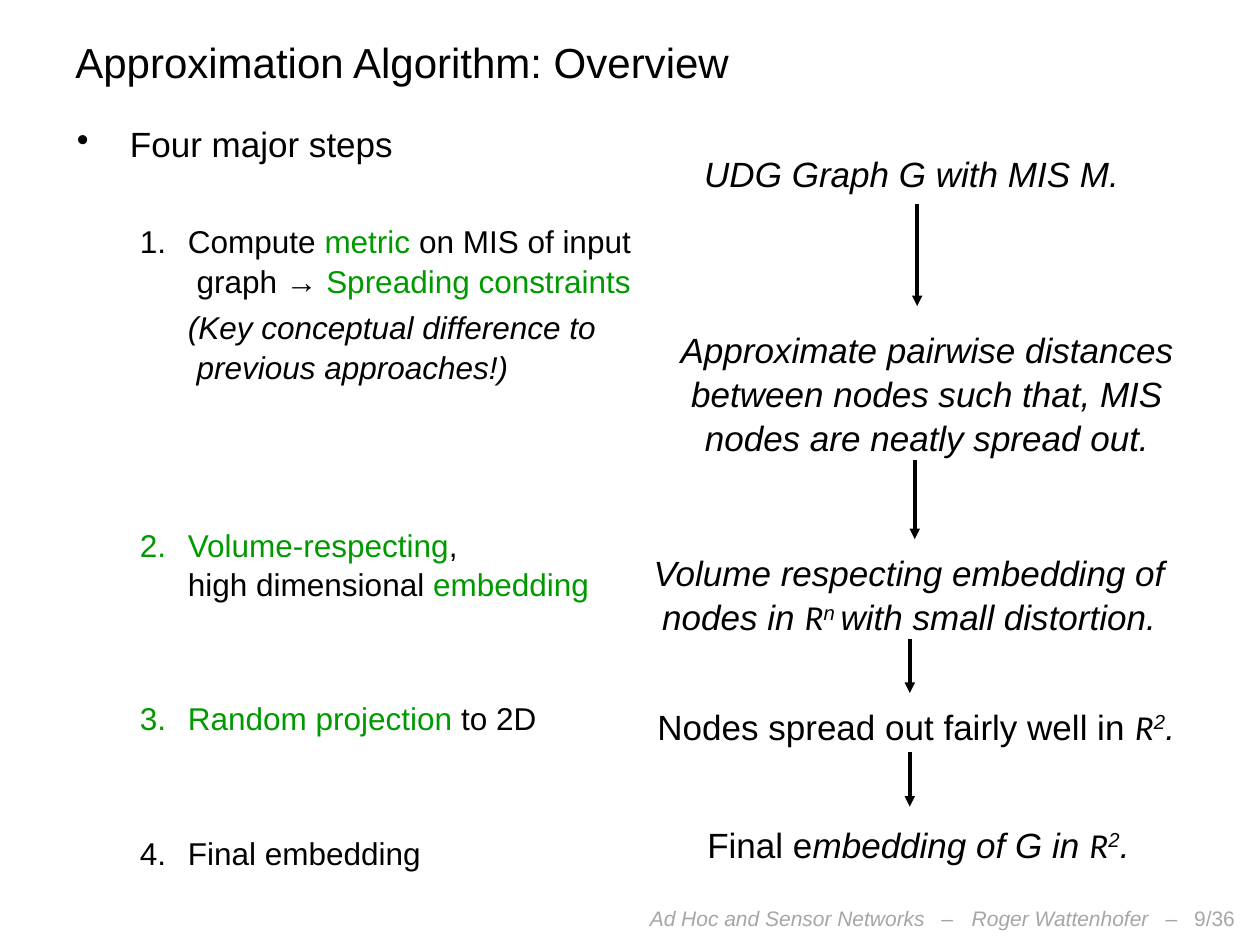
import pptx
import pptx.dml.color
import pptx.enum.shapes
import pptx.enum.text
import pptx.oxml.ns
import pptx.util
from lxml import etree

Cm, Pt = pptx.util.Cm, pptx.util.Pt
qn = pptx.oxml.ns.qn
ALIGN = pptx.enum.text.PP_ALIGN
BLACK, GREEN, GRAY = "000000", "009900", "A6A6A6"


def add_box(x, y, w, h):
    tf = s.shapes.add_textbox(Cm(x), Cm(y), Cm(w), Cm(h)).text_frame
    tf.word_wrap = True
    return tf


def add_run(p, text, size, color=BLACK, italic=False, font="Arial", raised=False):
    for i, line in enumerate(text.split("\n")):
        if i:
            p.add_line_break()
        if not line:
            continue
        r = p.add_run()
        r.text = line
        r.font.size = Pt(size)
        r.font.name = font
        r.font.italic = italic
        r.font.color.rgb = pptx.dml.color.RGBColor.from_string(color)
        if raised:
            r.font._element.set("baseline", "30000")


prs = pptx.Presentation()
prs.slide_width, prs.slide_height = Cm(25.4), Cm(19.05)
s = prs.slides.add_slide(prs.slide_layouts[6])

# Footer and page number
p = add_box(12.85, 18.14, 11.43, 0.91).paragraphs[0]
tabs = etree.SubElement(p._p.get_or_add_pPr(), qn("a:tabLst"))
for pos in (5.88, 6.49, 10.4):
    etree.SubElement(tabs, qn("a:tab"), pos=str(Cm(pos)), algn="l")
add_run(p, "Ad Hoc and Sensor Networks\t–\tRoger Wattenhofer\t–", 12, GRAY, True)
p = add_box(23.57, 18.14, 1.83, 0.89).paragraphs[0]
p.alignment = ALIGN.CENTER
add_run(p, "9/36", 12, GRAY)

# Title
tf = add_box(1.27, 0.56, 22.86, 1.37)
tf.vertical_anchor = pptx.enum.text.MSO_ANCHOR.MIDDLE
add_run(tf.paragraphs[0], "Approximation Algorithm: Overview", 24)

# Steps: marker, space before, runs of (text, color, italic)
steps = [
    ("•", 0, [("Four major steps", BLACK, False)]),
    (1, 31.75, [("Compute ", BLACK, False), ("metric", GREEN, False),
                (" on MIS of input\n graph → ", BLACK, False),
                ("Spreading constraints", GREEN, False)]),
    (None, 3.6, [("(Key conceptual difference to\n previous approaches!)", BLACK, True)]),
    (2, 79, [("Volume-respecting", GREEN, False),
             (",\nhigh dimensional ", BLACK, False), ("embedding", GREEN, False)]),
    (2, 54, [("Random projection", GREEN, False), (" to 2D", BLACK, False)]),
    (2, 54, [("Final embedding", BLACK, False)]),
]
tf = add_box(1.3, 2.31, 22.81, 14.83)
for i, (marker, before, runs) in enumerate(steps):
    p = tf.add_paragraph() if i else tf.paragraphs[0]
    p.line_spacing = 1.05
    p.space_before = Pt(before)
    pPr = p._p.get_or_add_pPr()
    if marker == "•":
        left, hang, size = 1.07, 1.07, 20
        etree.SubElement(pPr, qn("a:buChar"), char=marker)
    else:
        left, hang, size = 2.24, 0.97 if marker else 0, 18
        p.level = 1
        if marker:
            num = etree.SubElement(pPr, qn("a:buAutoNum"), type="arabicPeriod")
            if marker > 1:
                num.set("startAt", str(marker))
    pPr.set("marL", str(Cm(left)))
    pPr.set("indent", str(-Cm(hang)))
    for text, color, italic in runs:
        add_run(p, text, size, color, italic)

# Flow texts: box, left margin, runs of (text, italic, font, raised)
R = ("R", True, "Calibri", False)
SQUARED = [R, ("2", True, "Arial", True), (".", True, "Arial", False)]
flow = [
    ((13.72, 2.9, 9.32, 1.12), 0, [("UDG Graph G with MIS M.", True, "Arial", False)]),
    ((11.79, 6.45, 12.73, 2.82), 1.07,
     [("Approximate pairwise distances between nodes such that, "
       "MIS nodes are neatly spread out.", True, "Arial", False)]),
    ((11, 10.95, 13.59, 1.98), 1.07,
     [("Volume respecting embedding of nodes in ", True, "Arial", False), R,
      ("n ", True, "Arial", True), ("with small distortion.", True, "Arial", False)]),
    ((11.46, 14.05, 12.95, 1.12), 1.07,
     [("Nodes spread out fairly well in ", False, "Arial", False)] + SQUARED),
    ((11.96, 16.43, 12.04, 1.12), 1.07,
     [("Final e", False, "Arial", False),
      ("mbedding of G in ", True, "Arial", False)] + SQUARED),
]
for box, left, runs in flow:
    p = add_box(*box).paragraphs[0]
    p.alignment = ALIGN.CENTER
    p.line_spacing = 1.05
    p._p.get_or_add_pPr().set("marL", str(Cm(left)))
    for text, italic, font, raised in runs:
        add_run(p, text, 20, BLACK, italic, font, raised)

# Arrows between the flow texts
for x, top, bottom in [(18.49, 4.11, 6.17), (18.44, 9.27, 10.87),
                       (18.34, 12.88, 13.97), (18.34, 15.16, 16.26)]:
    sp = s.shapes.add_connector(pptx.enum.shapes.MSO_CONNECTOR.STRAIGHT,
                                Cm(x), Cm(top), Cm(x), Cm(bottom))
    sp.line.width = Pt(2)
    sp.line.color.rgb = pptx.dml.color.RGBColor.from_string(BLACK)
    etree.SubElement(sp.line._get_or_add_ln(), qn("a:tailEnd"), type="triangle")
    etree.SubElement(sp._element.spPr, qn("a:effectLst"))

prs.save("out.pptx")
